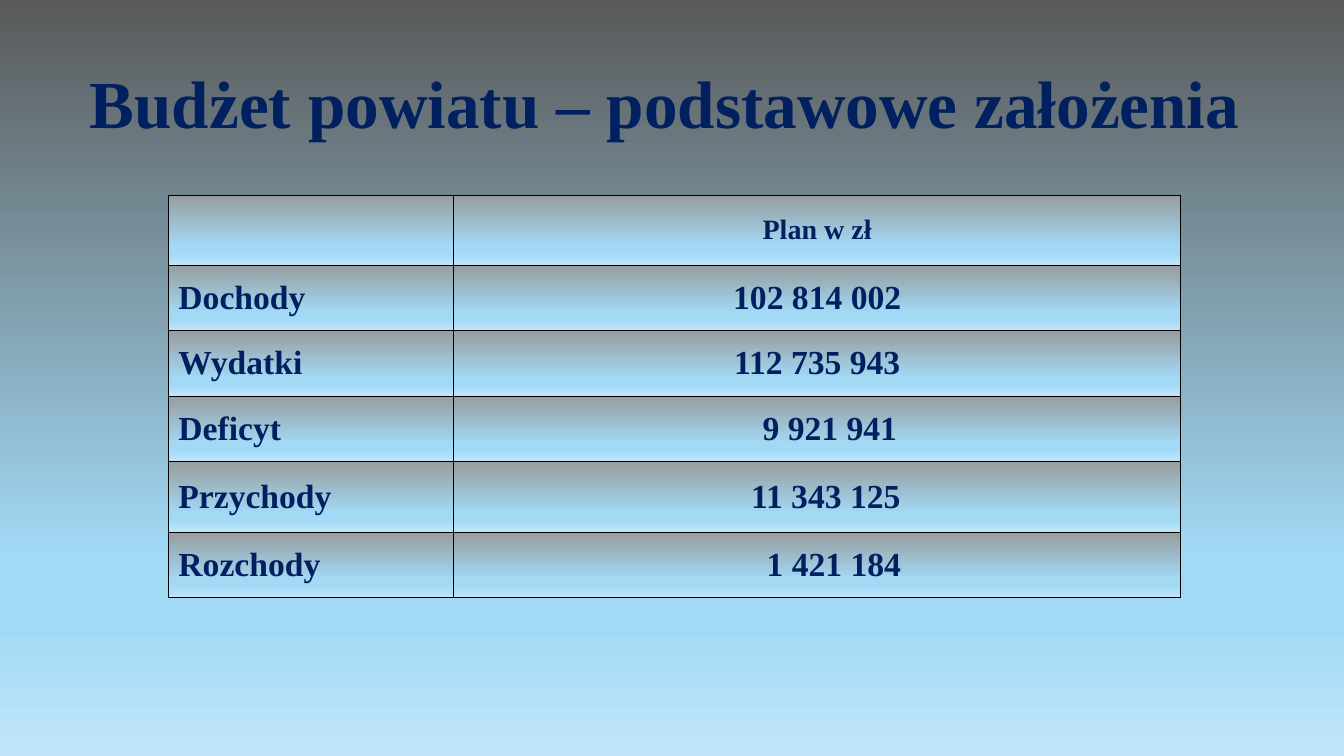
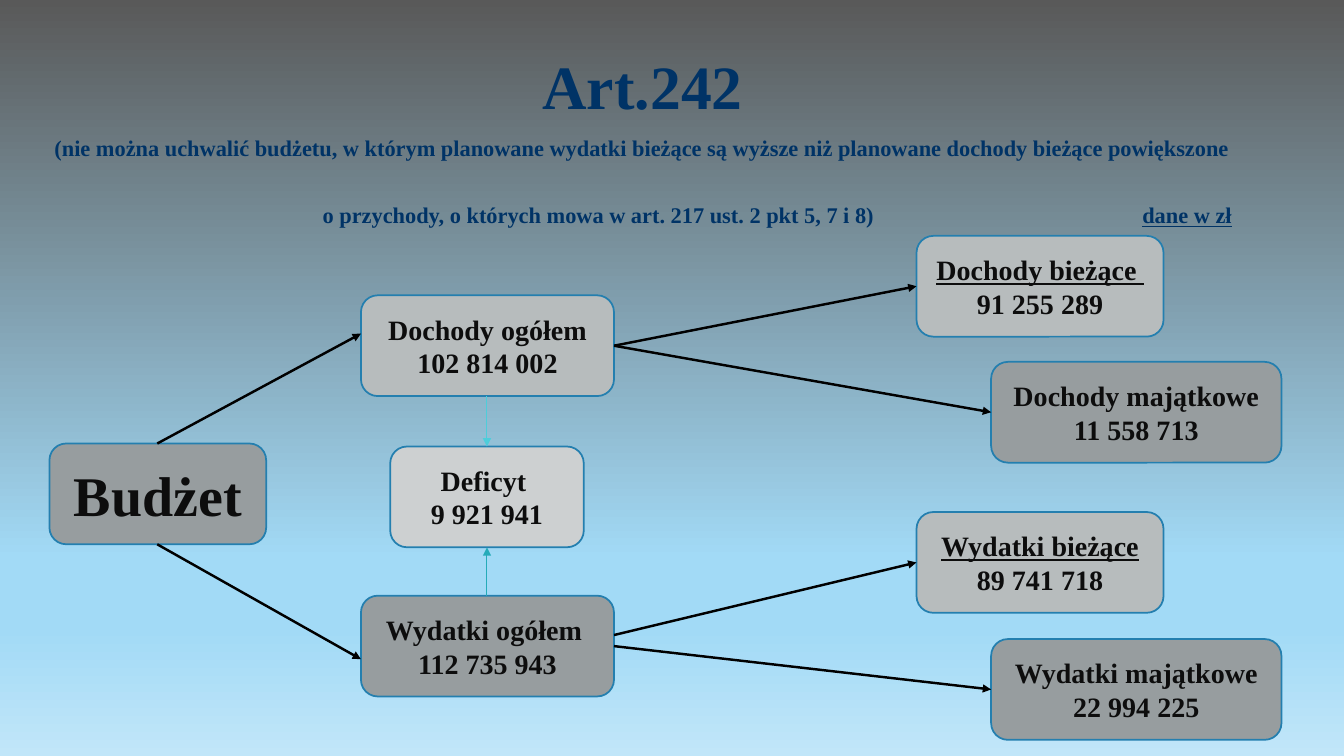
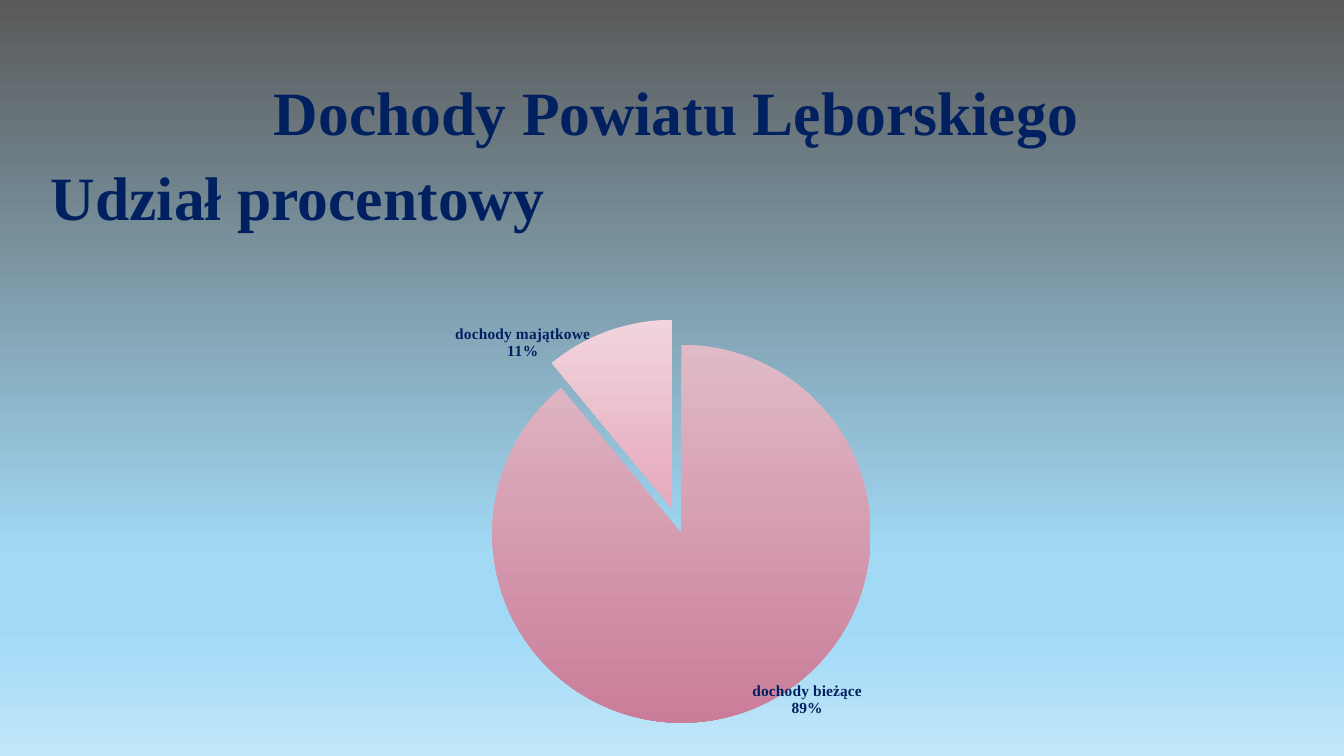
import copy
from typing import NamedTuple

import lxml.etree as etree
import pptx
import pptx.chart.data
import pptx.dml.color
import pptx.dml.fill
import pptx.enum.chart
import pptx.enum.shapes
import pptx.enum.text
import pptx.oxml.ns
import pptx.presentation
import pptx.slide
import pptx.table
import pptx.util

RGB = pptx.dml.color.RGBColor
Pt = pptx.util.Pt
qn = pptx.oxml.ns.qn
ALIGN = pptx.enum.text.PP_ALIGN
MIDDLE = pptx.enum.text.MSO_ANCHOR.MIDDLE

PX = 9144  # 100 px to the inch
FONT = "Times New Roman"
NAVY = RGB(0x00, 0x20, 0x60)
BLUE = RGB(0x00, 0x33, 0x66)
INK = RGB(0x0D, 0x0D, 0x0D)
BLACK = RGB(0x00, 0x00, 0x00)
OUTLINE = RGB(0x24, 0x7F, 0xAF)
DARK_GREY = RGB(0x97, 0x9D, 0x9F)
MID_GREY = RGB(0xB7, 0xBC, 0xBD)
LIGHT_GREY = RGB(0xCD, 0xD0, 0xD1)
CYAN = RGB(0x4E, 0xCD, 0xDA)
TEAL = RGB(0x25, 0xAB, 0xB9)

Stops = list[tuple[float, RGB]]
SKY: Stops = [(0.74, RGB(0xA2, 0xDA, 0xF6)), (0.83, RGB(0xA2, 0xDA, 0xF6)),
              (1, RGB(0xC1, 0xE6, 0xF9))]
BACKGROUND: Stops = [(0, RGB(0x59, 0x59, 0x59)), *SKY]
CELL_FILL: Stops = [(0, DARK_GREY), *SKY]
SLICE_FILLS: list[Stops] = [
    [(0, RGB(0xE0, 0xBA, 0xC7)), (1, RGB(0xCA, 0x7D, 0x99))],
    [(0, RGB(0xF1, 0xD4, 0xDD)), (1, RGB(0xE6, 0xA9, 0xBD))],
]


class Label(NamedTuple):
    x: int
    y: int
    w: int
    h: int
    text: str
    size: int
    color: RGB = NAVY
    align: ALIGN = ALIGN.CENTER
    underline: bool = False


class Box(NamedTuple):
    x: int
    y: int
    w: int
    fill: RGB
    lines: list[str]
    size: int = 20
    underline_first: bool = False


class Arrow(NamedTuple):
    x1: int
    y1: int
    x2: int
    y2: int
    color: RGB = BLACK
    width: float = 1.75


class Row(NamedTuple):
    height: int
    name: str
    amount: str
    indent: int = 0
    size: int = 24


BOX_H = 100

BUDGET_ROWS = [
    Row(69, "", "Plan w zł", size=20),
    Row(65, "Dochody", "102 814 002"),
    Row(65, "Wydatki", "112 735 943"),
    Row(65, "Deficyt", "9 921 941", indent=25),
    Row(70, "Przychody", "11 343 125", indent=17),
    Row(65, "Rozchody", "1 421 184", indent=33),
]

ARTICLE_LABELS = [
    Label(36, 49, 1203, 70, "Art.242", 44, BLUE),
    Label(54, 133, 1185, 26,
          "(nie można uchwalić budżetu, w którym planowane wydatki bieżące "
          "są wyższe niż planowane dochody bieżące powiększone", 16, BLUE, ALIGN.LEFT),
    Label(320, 200, 600, 26, "o przychody, o których mowa w art. 217 ust. 2 pkt 5, 7 i 8)",
          16, BLUE, ALIGN.LEFT),
    Label(1133, 200, 110, 26, "dane w zł", 16, BLUE, ALIGN.LEFT, True),
]

BUDGET_BOXES = [
    Box(49, 440, 215, DARK_GREY, ["Budżet"], 40),
    Box(387, 443, 192, LIGHT_GREY, ["Deficyt ", "9 921 941"]),
    Box(358, 293, 251, MID_GREY, ["Dochody ogółem", "102 814 002"]),
    Box(983, 634, 288, DARK_GREY, ["Wydatki majątkowe", "22 994 225"]),
    Box(909, 508, 245, MID_GREY, ["Wydatki bieżące", "89 741 718"], underline_first=True),
    Box(983, 359, 288, DARK_GREY, ["Dochody majątkowe", "11 558 713"]),
    Box(909, 234, 245, MID_GREY, ["Dochody bieżące ", "91 255 289"], underline_first=True),
    Box(358, 591, 251, DARK_GREY, ["Wydatki ogółem ", "112 735 943"]),
]

BUDGET_ARROWS = [
    Arrow(156, 440, 358, 331),
    Arrow(156, 540, 358, 654),
    Arrow(609, 343, 909, 284),
    Arrow(609, 343, 983, 409),
    Arrow(609, 630, 909, 558),
    Arrow(609, 641, 983, 684),
    Arrow(483, 393, 483, 443, CYAN, 0.75),
    Arrow(483, 591, 483, 543, TEAL, 0.75),
]


def px(*lengths: int) -> list[pptx.util.Emu]:
    return [pptx.util.Emu(n * PX) for n in lengths]


def paint_gradient(fill: pptx.dml.fill.FillFormat, stops: Stops) -> None:
    """Fill from top to bottom with any number of stops."""
    fill.gradient()
    fill.gradient_angle = 270
    first = fill.gradient_stops[0].element
    for _ in stops[2:]:
        first.addnext(copy.deepcopy(first))
    for stop, (position, color) in zip(fill.gradient_stops, stops):
        stop.position = position
        stop.color.rgb = color


def style_paragraph(p, size: int, color: RGB, align: ALIGN, underline: bool = False) -> None:
    p.alignment = align
    for r in p.runs:
        r.font.name = FONT
        r.font.size = Pt(size)
        r.font.bold = True
        r.font.underline = underline
        r.font.color.rgb = color


def add_label(slide: pptx.slide.Slide, label: Label) -> None:
    sp = slide.shapes.add_textbox(*px(label.x, label.y, label.w, label.h))
    tf = sp.text_frame
    tf.word_wrap = True
    tf.margin_left = tf.margin_right = tf.margin_top = tf.margin_bottom = 0
    tf.vertical_anchor = MIDDLE
    tf.text = label.text
    style_paragraph(tf.paragraphs[0], label.size, label.color, label.align, label.underline)


def add_box(slide: pptx.slide.Slide, box: Box) -> None:
    sp = slide.shapes.add_shape(pptx.enum.shapes.MSO_SHAPE.ROUNDED_RECTANGLE,
                                *px(box.x, box.y, box.w, BOX_H))
    sp.shadow.inherit = False
    sp.fill.solid()
    sp.fill.fore_color.rgb = box.fill
    sp.line.color.rgb = OUTLINE
    sp.line.width = Pt(1.25)
    tf = sp.text_frame
    tf.word_wrap = True
    tf.vertical_anchor = MIDDLE
    tf.text = "\n".join(box.lines)
    for i, p in enumerate(tf.paragraphs):
        style_paragraph(p, box.size, INK, ALIGN.CENTER, box.underline_first and i == 0)


def add_arrow(slide: pptx.slide.Slide, arrow: Arrow) -> None:
    line = slide.shapes.add_connector(pptx.enum.shapes.MSO_CONNECTOR.STRAIGHT,
                                      *px(arrow.x1, arrow.y1, arrow.x2, arrow.y2))
    line.line.color.rgb = arrow.color
    line.line.width = Pt(arrow.width)
    ln = line.line._get_or_add_ln()
    etree.SubElement(ln, qn("a:tailEnd"), type="triangle")
    ln.addnext(etree.Element(qn("a:effectLst")))


def add_borders(cell: pptx.table._Cell) -> None:
    tc_pr = cell._tc.get_or_add_tcPr()
    for i, side in enumerate(("lnL", "lnR", "lnT", "lnB")):
        ln = etree.Element(qn(f"a:{side}"), w=str(Pt(1)))
        solid = etree.SubElement(ln, qn("a:solidFill"))
        etree.SubElement(solid, qn("a:srgbClr"), val=str(BLACK))
        tc_pr.insert(i, ln)


def add_budget_table(slide: pptx.slide.Slide, x: int, y: int,
                     widths: list[int], rows: list[Row]) -> None:
    frame = slide.shapes.add_table(len(rows), len(widths), *px(
        x, y, sum(widths), sum(row.height for row in rows)))
    table = frame.table
    for column, width in zip(table.columns, px(*widths)):
        column.width = width
    for i, row in enumerate(rows):
        table.rows[i].height = px(row.height)[0]
        cells = table.rows[i].cells
        for cell, text, align in zip(cells, (row.name, row.amount), (ALIGN.LEFT, ALIGN.CENTER)):
            cell.vertical_anchor = MIDDLE
            paint_gradient(cell.fill, CELL_FILL)
            add_borders(cell)
            cell.text_frame.text = text
            style_paragraph(cell.text_frame.paragraphs[0], row.size, NAVY, align)
        cells[1].margin_left = px(10 + row.indent)[0]


def manual_layout(inner: bool = False, **fractions: float) -> etree._Element:
    layout = etree.Element(qn("c:layout"))
    manual = etree.SubElement(layout, qn("c:manualLayout"))
    if inner:
        etree.SubElement(manual, qn("c:layoutTarget"), val="inner")
        for mode in ("xMode", "yMode"):
            etree.SubElement(manual, qn(f"c:{mode}"), val="edge")
    for name, value in fractions.items():
        etree.SubElement(manual, qn(f"c:{name}"), val=str(value))
    return layout


def add_income_pie(slide: pptx.slide.Slide) -> None:
    data = pptx.chart.data.CategoryChartData()
    data.categories = ["dochody bieżące", "dochody majątkowe"]
    data.add_series("Dochody", (89, 11))
    chart = slide.shapes.add_chart(pptx.enum.chart.XL_CHART_TYPE.PIE,
                                   *px(214, 220, 906, 508), data).chart
    chart.has_title = False
    chart.has_legend = False
    chart.font.name = FONT
    chart.font.size = Pt(11)
    plot_area = chart.element.find(".//" + qn("c:plotArea"))
    for old in plot_area.findall(qn("c:layout")):
        plot_area.remove(old)
    plot_area.insert(0, manual_layout(True, x=0.28, y=0.19, w=0.45, h=0.79))

    plot = chart.plots[0]
    plot.vary_by_categories = True
    series = plot.series[0]
    for i, stops in enumerate(SLICE_FILLS):
        paint_gradient(series.points[i].format.fill, stops)
    explosion = etree.Element(qn("c:explosion"), val="7")
    plot_area.find(".//" + qn("c:dPt")).addprevious(explosion)

    labels = series.data_labels
    labels.show_value = False
    labels.show_percentage = True
    labels.show_category_name = True
    labels.number_format = "0%"
    labels.number_format_is_linked = False
    labels.position = pptx.enum.chart.XL_LABEL_POSITION.INSIDE_END
    labels.font.name = FONT
    labels.font.size = Pt(11)
    labels.font.bold = True
    labels.font.color.rgb = NAVY
    place_pie_labels(plot_area.find(".//" + qn("c:dLbls")), [(0.13, 0.02), (-0.17, -0.02)])


def place_pie_labels(d_lbls: etree._Element, offsets: list[tuple[float, float]]) -> None:
    """Put category and percentage on two lines and shift each label."""
    for leader in d_lbls.findall(qn("c:showLeaderLines")):
        d_lbls.remove(leader)
    etree.SubElement(d_lbls, qn("c:separator")).text = "\n"
    shared = list(d_lbls)
    for i, (x, y) in enumerate(offsets):
        d_lbl = etree.Element(qn("c:dLbl"))
        etree.SubElement(d_lbl, qn("c:idx"), val=str(i))
        d_lbl.append(manual_layout(x=x, y=y))
        d_lbl.extend(copy.deepcopy(shared))
        d_lbls.insert(i, d_lbl)
    etree.SubElement(d_lbls, qn("c:showLeaderLines"), val="0")


def add_slide(prs: pptx.presentation.Presentation, labels: list[Label]) -> pptx.slide.Slide:
    slide = prs.slides.add_slide(prs.slide_layouts[6])
    for label in labels:
        add_label(slide, label)
    return slide


def main() -> None:
    prs = pptx.Presentation()
    prs.slide_width, prs.slide_height = px(1333, 750)
    paint_gradient(prs.slide_master.background.fill, BACKGROUND)

    slide = add_slide(prs, [Label(39, 63, 1241, 76, "Budżet powiatu – podstawowe założenia", 48)])
    add_budget_table(slide, 167, 194, [283, 721], BUDGET_ROWS)

    slide = add_slide(prs, ARTICLE_LABELS)
    for box in BUDGET_BOXES:
        add_box(slide, box)
    for arrow in BUDGET_ARROWS:
        add_arrow(slide, arrow)

    slide = add_slide(prs, [
        Label(24, 159, 543, 70, "Udział procentowy", 44),
        Label(253, 75, 836, 70, "Dochody Powiatu Lęborskiego", 44),
    ])
    add_income_pie(slide)
    prs.save("out.pptx")


if __name__ == "__main__":
    main()
